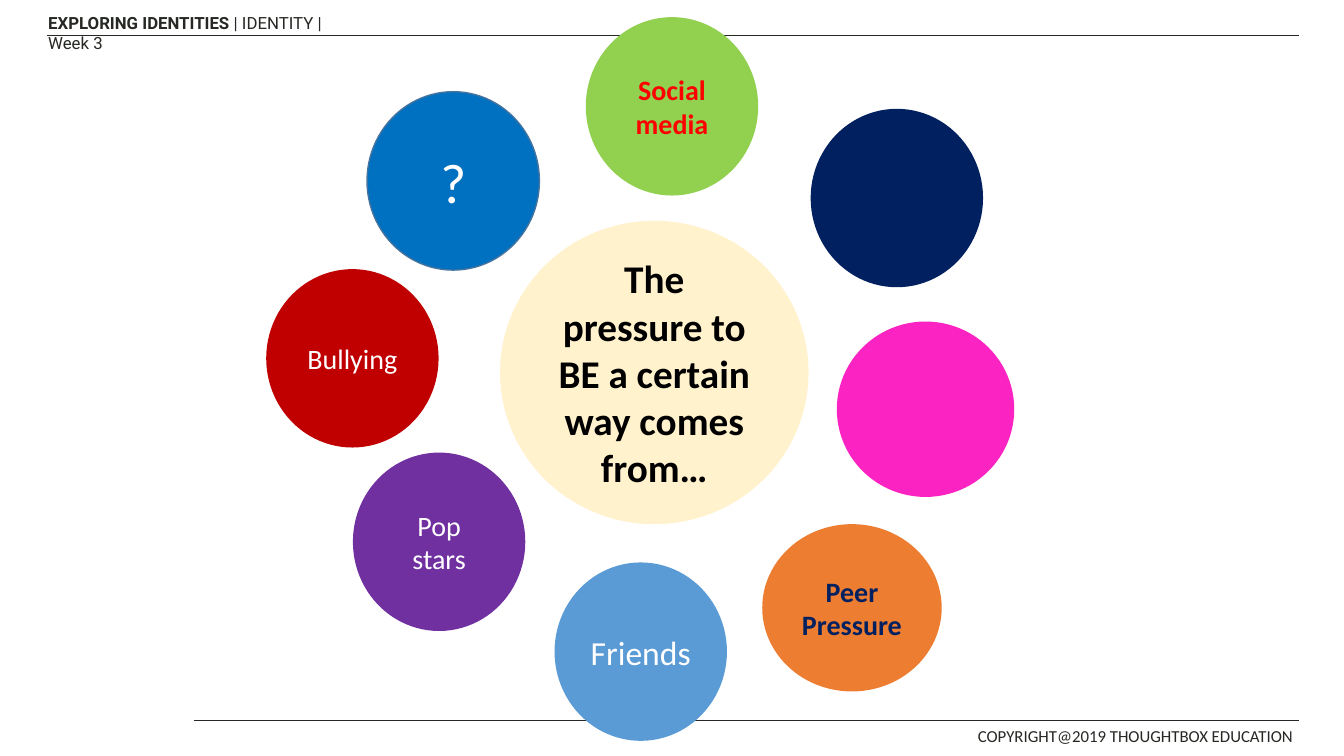
from dataclasses import dataclass

from lxml import etree
from pptx import Presentation
from pptx.dml.color import RGBColor
from pptx.enum.shapes import MSO_CONNECTOR, MSO_SHAPE
from pptx.enum.text import MSO_ANCHOR, MSO_AUTO_SIZE, PP_ALIGN
from pptx.oxml.ns import qn
from pptx.slide import Slide
from pptx.text.text import TextFrame
from pptx.util import Inches, Pt

STRAIGHT = MSO_CONNECTOR.STRAIGHT
OVAL = MSO_SHAPE.OVAL
MIDDLE = MSO_ANCHOR.MIDDLE
GROW = MSO_AUTO_SIZE.SHAPE_TO_FIT_TEXT
CENTER = PP_ALIGN.CENTER

INK = RGBColor(0x25, 0x28, 0x23)
BLACK = RGBColor(0x00, 0x00, 0x00)
WHITE = RGBColor(0xFF, 0xFF, 0xFF)
CREAM = RGBColor(0xFF, 0xF2, 0xCC)
NAVY = RGBColor(0x00, 0x20, 0x60)
PINK = RGBColor(0xFB, 0x23, 0xC2)
GREEN = RGBColor(0x92, 0xD0, 0x50)
RED = RGBColor(0xFF, 0x00, 0x00)
ORANGE = RGBColor(0xED, 0x7D, 0x31)
DARK_RED = RGBColor(0xC0, 0x00, 0x00)
PURPLE = RGBColor(0x70, 0x30, 0xA0)
LIGHT_BLUE = RGBColor(0x5B, 0x9B, 0xD5)
BLUE = RGBColor(0x00, 0x70, 0xC0)
BLUE_EDGE = RGBColor(0x43, 0x73, 0x9E)

RULE_RIGHT = 12.88
BUBBLE_WIDTH, BUBBLE_HEIGHT = 1.71, 1.77


@dataclass(frozen=True)
class Run:
    text: str
    size: float = 12
    color: RGBColor = INK
    bold: bool = False
    font: str = "Calibri"


@dataclass(frozen=True)
class Caption:
    left: float
    top: float
    width: float
    height: float
    runs: tuple[Run, ...]


@dataclass(frozen=True)
class Rule:
    left: float
    y: float


@dataclass(frozen=True)
class Bubble:
    left: float
    top: float
    fill: RGBColor
    label: Run | None = None
    width: float = BUBBLE_WIDTH
    height: float = BUBBLE_HEIGHT
    edge: RGBColor | None = None


CAPTIONS = (
    Caption(0.38, 0.08, 3.23, 0.3, (
        Run("EXPLORING IDENTITIES", bold=True, font="Roboto"),
        Run(" | IDENTITY | Week 3", font="Roboto"),
    )),
    Caption(9.6, 7.15, 3.4, 0.31, (Run("COPYRIGHT@2019 THOUGHTBOX EDUCATION"),)),
)

RULES = (Rule(0.47, 0.35), Rule(1.92, 7.15))

BUBBLES = (
    Bubble(4.96, 2.19, CREAM,
           Run("The pressure to BE a certain way comes from…", 28, BLACK, True),
           width=3.06, height=3.01),
    Bubble(8.04, 1.08, NAVY),
    Bubble(8.3, 3.19, PINK, width=1.76, height=1.74),
    Bubble(5.81, 0.17, GREEN, Run("Social media", 20, RED, True)),
    Bubble(7.56, 5.2, ORANGE, Run("Peer Pressure", 20, NAVY, True),
           width=1.78, height=1.66),
    Bubble(2.64, 2.67, DARK_RED, Run("Bullying", 20, WHITE)),
    Bubble(3.5, 4.49, PURPLE, Run("Pop stars", 20, WHITE)),
    Bubble(5.5, 5.58, LIGHT_BLUE, Run("Friends", 24, WHITE)),
    Bubble(3.64, 0.91, BLUE, Run("?", 40, WHITE), edge=BLUE_EDGE),
)


def write_runs(frame: TextFrame, runs: tuple[Run, ...]) -> None:
    paragraph = frame.paragraphs[0]
    for run in runs:
        piece = paragraph.add_run()
        piece.text = run.text
        font_format = {"name": run.font, "size": Pt(run.size), "bold": run.bold}
        for attribute, value in font_format.items():
            setattr(piece.font, attribute, value)
        piece.font.color.rgb = run.color


def add_caption(slide: Slide, caption: Caption) -> None:
    box = slide.shapes.add_textbox(Inches(caption.left), Inches(caption.top),
                                   Inches(caption.width), Inches(caption.height))
    box.text_frame.word_wrap = True
    box.text_frame.auto_size = GROW
    write_runs(box.text_frame, caption.runs)


def add_rule(slide: Slide, rule: Rule) -> None:
    line = slide.shapes.add_connector(STRAIGHT, Inches(rule.left), Inches(rule.y),
                                      Inches(RULE_RIGHT), Inches(rule.y))
    line.line.color.rgb = INK
    line.line.width = Pt(1)
    etree.SubElement(line._element.spPr, qn("a:effectLst"))


def add_bubble(slide: Slide, bubble: Bubble) -> None:
    circle = slide.shapes.add_shape(OVAL, Inches(bubble.left), Inches(bubble.top),
                                    Inches(bubble.width), Inches(bubble.height))
    circle.shadow.inherit = False
    circle.fill.solid()
    circle.fill.fore_color.rgb = bubble.fill
    if bubble.edge is None:
        circle.line.fill.background()
    else:
        circle.line.color.rgb = bubble.edge
        circle.line.width = Pt(1)
    if bubble.label is not None:
        frame = circle.text_frame
        frame.word_wrap = True
        frame.vertical_anchor = MIDDLE
        frame.paragraphs[0].alignment = CENTER
        write_runs(frame, (bubble.label,))


def main() -> None:
    deck = Presentation()
    deck.slide_width, deck.slide_height = Inches(13.33), Inches(7.5)
    slide = deck.slides.add_slide(deck.slide_layouts[6])
    for caption in CAPTIONS:
        add_caption(slide, caption)
    for rule in RULES:
        add_rule(slide, rule)
    for bubble in BUBBLES:
        add_bubble(slide, bubble)
    deck.save("out.pptx")


if __name__ == "__main__":
    main()
